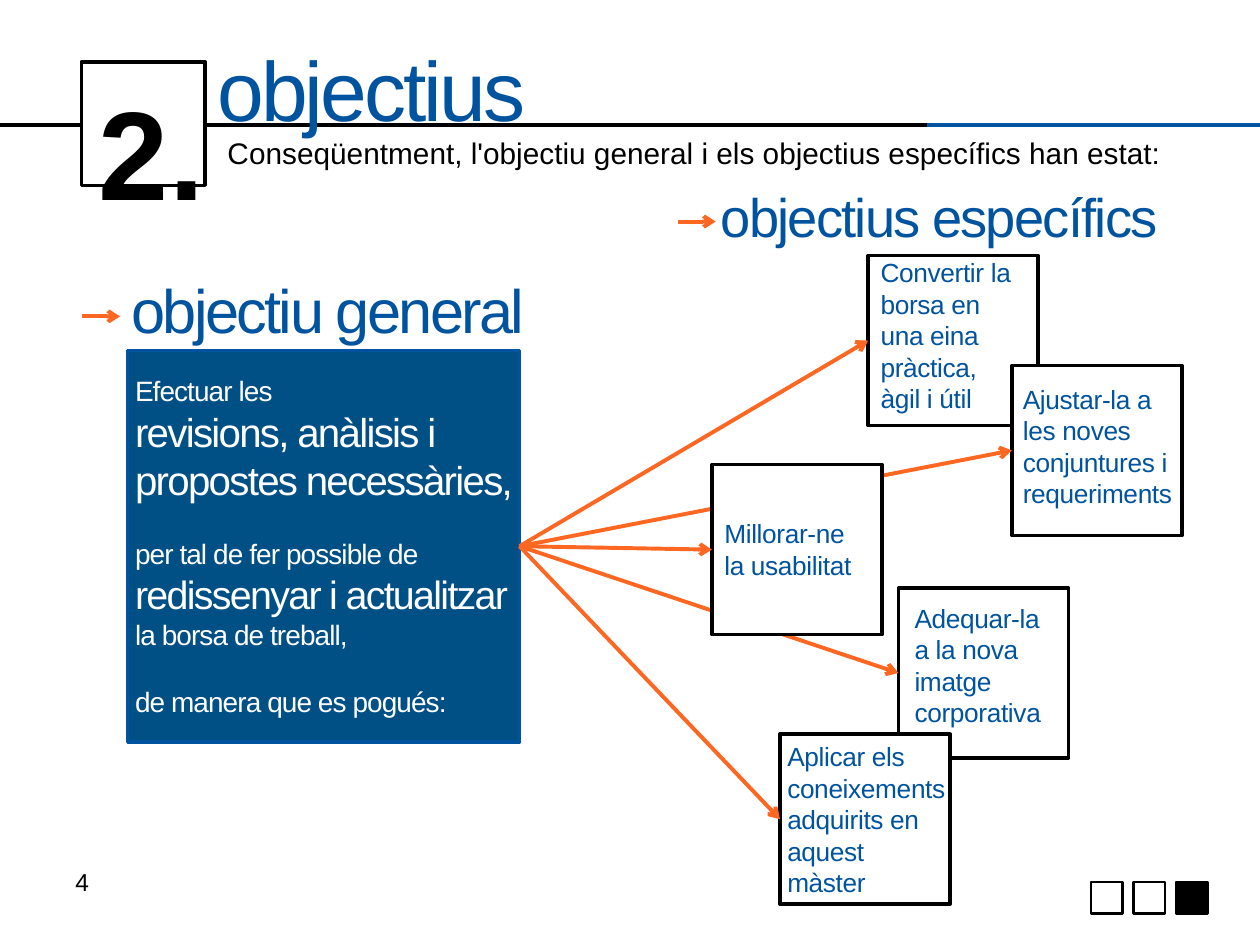
from lxml import etree
from pptx import Presentation
from pptx.dml.color import RGBColor
from pptx.enum import shapes, text
from pptx.oxml import ns
from pptx.util import Pt

COLOURS = {
    "black": "000000",
    "white": "FFFFFF",
    "blue": "00539E",
    "panel": "005086",
    "orange": "FD6721",
}
SQUARE_SIDE = 97.2
OBJECTIVES = [
    ("Adequar-la a la nova imatge corporativa", 513.4, 336, (2.1, 4.4, 97.2)),
    ("Convertir la borsa en una eina pràctica, àgil i útil", 496.1, 146, (0, -2.9, 95)),
    ("Ajustar-la a les noves conjuntures i requeriments", 578.2, 208.8, (-0.8, 6.5, 101.5)),
    ("Millorar-ne la usabilitat", 406.8, 265.5, (0, 26.6, 97.2)),
    ("Aplicar els coneixements adquirits en aquest màster", 445.7, 419.5, (-2.9, 0, 105.1)),
]
GENERAL_LINES = [
    ("Efectuar les", 16, -0.5, 0),
    ("revisions, anàlisis i propostes necessàries,", 23, -1, 0),
    ("per tal de fer possible de", 16, -0.5, 19),
    ("redissenyar i actualitzar", 22.5, -1, 0),
    ("la borsa de treball,", 16, -0.5, 0),
    ("de manera que es pogués:", 16, -0.5, 19),
]


def rgb(name):
    """Return the named colour."""
    return RGBColor.from_string(COLOURS[name])


def write(para, words, size, colour="black", bold=False, spacing=0):
    """Add a formatted span of text to a paragraph."""
    span = para.add_run()
    span.text = words
    span.font.name = "Arial"
    span.font.size = Pt(size)
    span.font.bold = bold
    span.font.color.rgb = rgb(colour)
    if spacing:
        span.font._element.set("spc", str(round(spacing * 100)))


def add_text(page, left, top, width, height, anchor=text.MSO_ANCHOR.TOP):
    """Add a wrapping text box and return its frame."""
    frame = page.shapes.add_textbox(Pt(left), Pt(top), Pt(width), Pt(height)).text_frame
    frame.word_wrap = True
    frame.vertical_anchor = anchor
    return frame


def add_label(page, box, words, size, **style):
    """Add a text box with one paragraph and return the paragraph."""
    para = add_text(page, *box).paragraphs[0]
    write(para, words, size, **style)
    return para


def add_box(page, left, top, side, fill="white", line="black", weight=2):
    """Add a square with a fill and an outline."""
    box = page.shapes.add_shape(
        shapes.MSO_SHAPE.RECTANGLE, Pt(left), Pt(top), Pt(side), Pt(side))
    box.shadow.inherit = False
    box.fill.solid()
    box.fill.fore_color.rgb = rgb(fill)
    box.line.color.rgb = rgb(line)
    box.line.width = Pt(weight)
    return box


def add_line(page, start, end, colour, arrow=False):
    """Add a straight line, with an arrowhead at its end if asked."""
    line = page.shapes.add_connector(
        shapes.MSO_CONNECTOR.STRAIGHT, *(Pt(value) for value in (*start, *end)))
    line.line.color.rgb = rgb(colour)
    line.line.width = Pt(2.25)
    if arrow:
        etree.SubElement(line.line._get_or_add_ln(), ns.qn("a:tailEnd"), type="arrow")
    etree.SubElement(line._element.spPr, ns.qn("a:effectLst"))
    return line


def add_header(page, left, top):
    """Add the rule, numbered square, title and introduction."""
    rule = top + 36
    add_line(page, (0, rule), (530, rule), "black")
    add_line(page, (530, rule), (720, rule), "blue")
    add_box(page, left, top, 70.6)
    number = add_label(page, (left + 2.9, top - 39.6, 83.5, 121.7), "2.", 72, bold=True)
    number.line_spacing = 1.5
    title = add_text(page, left + 70.6, top - 7.2, 484.6, 44.6, text.MSO_ANCHOR.MIDDLE)
    write(title.paragraphs[0], "objectius", 48, colour="blue", spacing=-1.7)
    intro = add_label(
        page, (left + 76.3, top + 38.2, 548.6, 28),
        "Conseqüentment, l'objectiu general i els objectius específics han estat:", 17)
    intro.alignment = text.PP_ALIGN.JUSTIFY


def add_heading(page, left, top, words, size, spacing, gap, width, drop):
    """Add a blue heading led by a short arrow."""
    add_label(page, (left + gap, top, width, 48), words, size,
              colour="blue", spacing=spacing)
    add_line(page, (left, top + drop), (left + 21.6, top + drop), "orange", arrow=True)


def add_general(page, left, top):
    """Add the general objective and return its panel."""
    add_heading(page, left - 26, top - 48.2, "objectiu general", 35, -1.5, 20.9, 270.7, 28.8)
    panel = add_box(page, left, top, 223.9, fill="panel", line="blue")
    frame = add_text(page, left - 2.9, top + 9.8, 238, 206.6)
    for index, (words, size, spacing, gap) in enumerate(GENERAL_LINES):
        para = frame.add_paragraph() if index else frame.paragraphs[0]
        para.space_before = Pt(gap)
        write(para, words, size, colour="white", spacing=spacing)
    return panel


def add_objective(page, panel, words, left, top, inset):
    """Add a specific objective joined to the general panel."""
    box = add_box(page, left, top, SQUARE_SIDE)
    arrow = add_line(page, (0, 0), (left, top), "orange", arrow=True)
    arrow.begin_connect(panel, 3)
    arrow.end_connect(box, 1)
    shift, drop, width = inset
    add_label(page, (left + shift, top + drop, width, SQUARE_SIDE), words, 15,
              colour="blue", spacing=-0.2)


def add_footer(page, left, top):
    """Add the page number and the three progress squares."""
    add_label(page, (left, top, 59.8, 37.4), "4", 14)
    for index, fill in enumerate(("white", "white", "black")):
        add_box(page, left + 587.5 + index * 24.2, top + 12.2, 18, fill=fill, weight=1.5)


def main():
    """Build and save the deck."""
    deck = Presentation()
    deck.slide_width, deck.slide_height = Pt(720), Pt(540)
    page = deck.slides.add_slide(deck.slide_layouts[6])
    add_header(page, 46.6, 35.3)
    panel = add_general(page, 73, 200.2)
    for objective in OBJECTIVES:
        add_objective(page, panel, *objective)
    add_heading(page, 387.4, 101, "objectius específics", 31, -1, 17.3, 291.6, 25.6)
    add_footer(page, 36, 491.8)
    deck.save("out.pptx")


if __name__ == "__main__":
    main()
